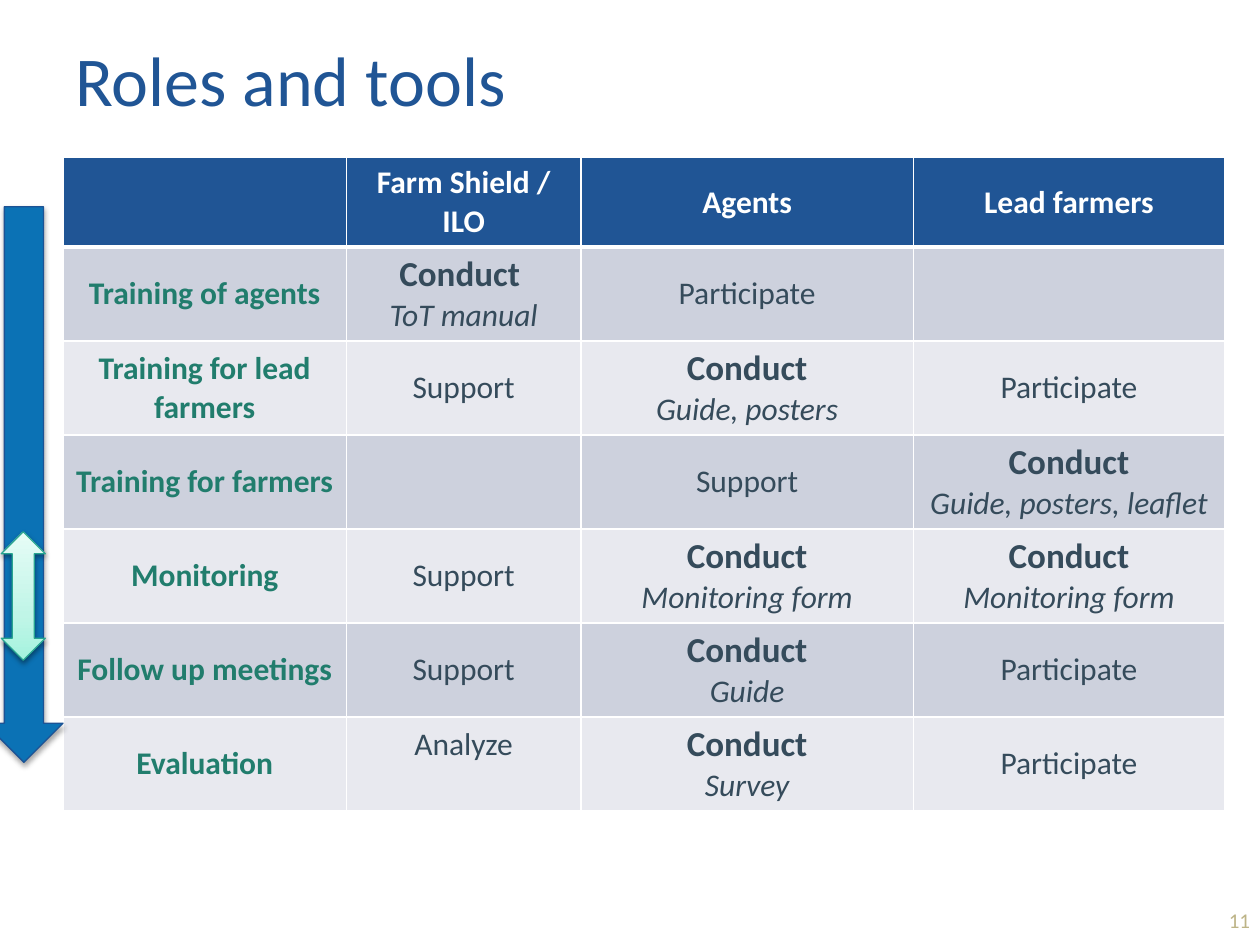
"""Build the "Roles and tools" slide: a responsibility table beside two timeline arrows."""
import pptx
import pptx.util
import pptx.dml.color
import pptx.enum.text
import pptx.enum.shapes
import pptx.oxml
import pptx.oxml.ns

THEME = {
    "font": "Calibri", "title": "205595", "head": "205595", "white": "FFFFFF",
    "bands": ("CDD1DD", "E8E9EF"), "stage": "217D6D", "body": "354B5B", "number": "BDB487",
    "timeline": "0B72B5", "timeline_edge": "1C5395", "loop_edge": "28A590",
    "loop": ((0, "A4F3DE"), (35, "C0F5E7"), (100, "E6FCF6")),
    "title_size": 40, "lead_size": 20, "body_size": 18, "number_size": 12,
}
ROLES = [
    ["", "Farm Shield / ILO", "Agents", "Lead farmers"],
    ["Training of agents", "Conduct \nToT manual", "Participate", ""],
    ["Training for lead farmers", "Support", "Conduct\nGuide, posters", "Participate"],
    ["Training for farmers", "", "Support", "Conduct\nGuide, posters, leaflet"],
    ["Monitoring", "Support", "Conduct\nMonitoring form", "Conduct\nMonitoring form"],
    ["Follow up meetings", "Support", "Conduct\nGuide", "Participate"],
    ["Evaluation", "Analyze", "Conduct\nSurvey", "Participate"],
]
COLUMN_SHARES = (22.5, 18.6, 26.4, 24.7)
ROW_SHARES = (9.3,) + (9.95,) * 6
ALIGN = pptx.enum.text.PP_ALIGN
MIDDLE = pptx.enum.text.MSO_ANCHOR.MIDDLE
SHAPES = pptx.enum.shapes.MSO_SHAPE
rgb = pptx.dml.color.RGBColor.from_string
NS = pptx.oxml.ns.nsdecls("a")

deck = pptx.Presentation()
deck.slide_width, deck.slide_height = pptx.util.Inches(10), pptx.util.Inches(7.5)
slide = deck.slides.add_slide(deck.slide_layouts[6])


def place(left, top, width, height):
    """Turn percentages of the slide into lengths."""
    across, down = deck.slide_width / 100, deck.slide_height / 100
    return [int(v) for v in (left * across, top * down, width * across, height * down)]


def write(frame, lines, align):
    """Fill a text frame with (text, colour, font format) lines."""
    frame.word_wrap = True
    for index, (text, colour, font_format) in enumerate(lines):
        line = frame.add_paragraph() if index else frame.paragraphs[0]
        line.alignment = align
        run = line.add_run()
        run.text = text
        run.font.color.rgb = rgb(colour)
        for key, value in {"name": THEME["font"], **font_format}.items():
            setattr(run.font, key, value)


table = slide.shapes.add_table(
    len(ROLES), len(COLUMN_SHARES), *place(5, 100 / 6, sum(COLUMN_SHARES), sum(ROW_SHARES))).table
for column, share in zip(table.columns, COLUMN_SHARES):
    column.width = place(0, 0, share, 0)[2]
for row, share in zip(table.rows, ROW_SHARES):
    row.height = place(0, 0, 0, share)[3]

body_size = pptx.util.Pt(THEME["body_size"])
lead_size = pptx.util.Pt(THEME["lead_size"])
for r, roles in enumerate(ROLES):
    for c, role in enumerate(roles):
        cell = table.cell(r, c)
        cell.vertical_anchor = MIDDLE
        cell.fill.solid()
        cell.fill.fore_color.rgb = rgb(THEME["bands"][(r - 1) % 2] if r else THEME["head"])
        for position, side in enumerate("LRTB"):
            heavy = (r == 0 and side == "B") or (r == 1 and side == "T")
            cell._tc.get_or_add_tcPr().insert(position, pptx.oxml.parse_xml(
                f'<a:ln{side} {NS} w="{pptx.util.Pt(3 if heavy else 1)}"><a:solidFill>'
                f'<a:srgbClr val="{THEME["white"]}"/></a:solidFill></a:ln{side}>'))
        if not role:
            continue
        first, *tools = role.split("\n")
        colour = THEME["white"] if r == 0 else THEME["stage"] if c == 0 else THEME["body"]
        lead = {"size": lead_size if tools else body_size,
                "bold": r == 0 or c == 0 or bool(tools)}
        tool = {"size": body_size, "bold": False, "italic": True}
        write(cell.text_frame,
              [(first, colour, lead)] + [(text, colour, tool) for text in tools], ALIGN.CENTER)

analyze = table.cell(6, 1)
analyze.vertical_anchor = pptx.enum.text.MSO_ANCHOR.TOP
analyze.margin_top = pptx.util.Inches(0.07)

for text, area, colour, size, align in (
    ("Roles and tools", (5, 0, 90, 100 / 6), THEME["title"], THEME["title_size"], ALIGN.LEFT),
    ("11", (76.9, 94.67, 23.3, 5.33), THEME["number"], THEME["number_size"], ALIGN.RIGHT),
):
    label = slide.shapes.add_textbox(*place(*area)).text_frame
    label.vertical_anchor = MIDDLE
    write(label, [(text, colour, {"size": pptx.util.Pt(size)})], align)

for outline, area, stops, edge, shade, distance in (
    (SHAPES.DOWN_ARROW, (-1.2, 21.87, 6.2, 58.8), ((0, THEME["timeline"]),),
     THEME["timeline_edge"], 35, 1.8),
    (SHAPES.UP_DOWN_ARROW, (0.1, 56.27, 3.5, 13.6), THEME["loop"],
     THEME["loop_edge"], 38, 1.6),
):
    arrow = slide.shapes.add_shape(outline, *place(*area))
    arrow.line.color.rgb = rgb(edge)
    arrow.line.width = pptx.util.Pt(0.75)
    arrow.shadow.inherit = False
    arrow.fill.solid()
    arrow.fill.fore_color.rgb = rgb(stops[0][1])
    properties = arrow._element.spPr
    if len(stops) > 1:
        marks = "".join(f'<a:gs pos="{at * 1000}"><a:srgbClr val="{colour}"/></a:gs>'
                        for at, colour in stops)
        properties.replace(properties.find(pptx.oxml.ns.qn("a:solidFill")), pptx.oxml.parse_xml(
            f'<a:gradFill {NS} rotWithShape="1"><a:gsLst>{marks}</a:gsLst>'
            '<a:lin ang="16200000" scaled="0"/></a:gradFill>'))
    properties.find(pptx.oxml.ns.qn("a:effectLst")).append(pptx.oxml.parse_xml(
        f'<a:outerShdw {NS} blurRad="{pptx.util.Pt(3.1)}" dist="{pptx.util.Pt(distance)}" '
        f'dir="5400000" rotWithShape="0"><a:srgbClr val="000000">'
        f'<a:alpha val="{shade * 1000}"/></a:srgbClr></a:outerShdw>'))

deck.save("out.pptx")
